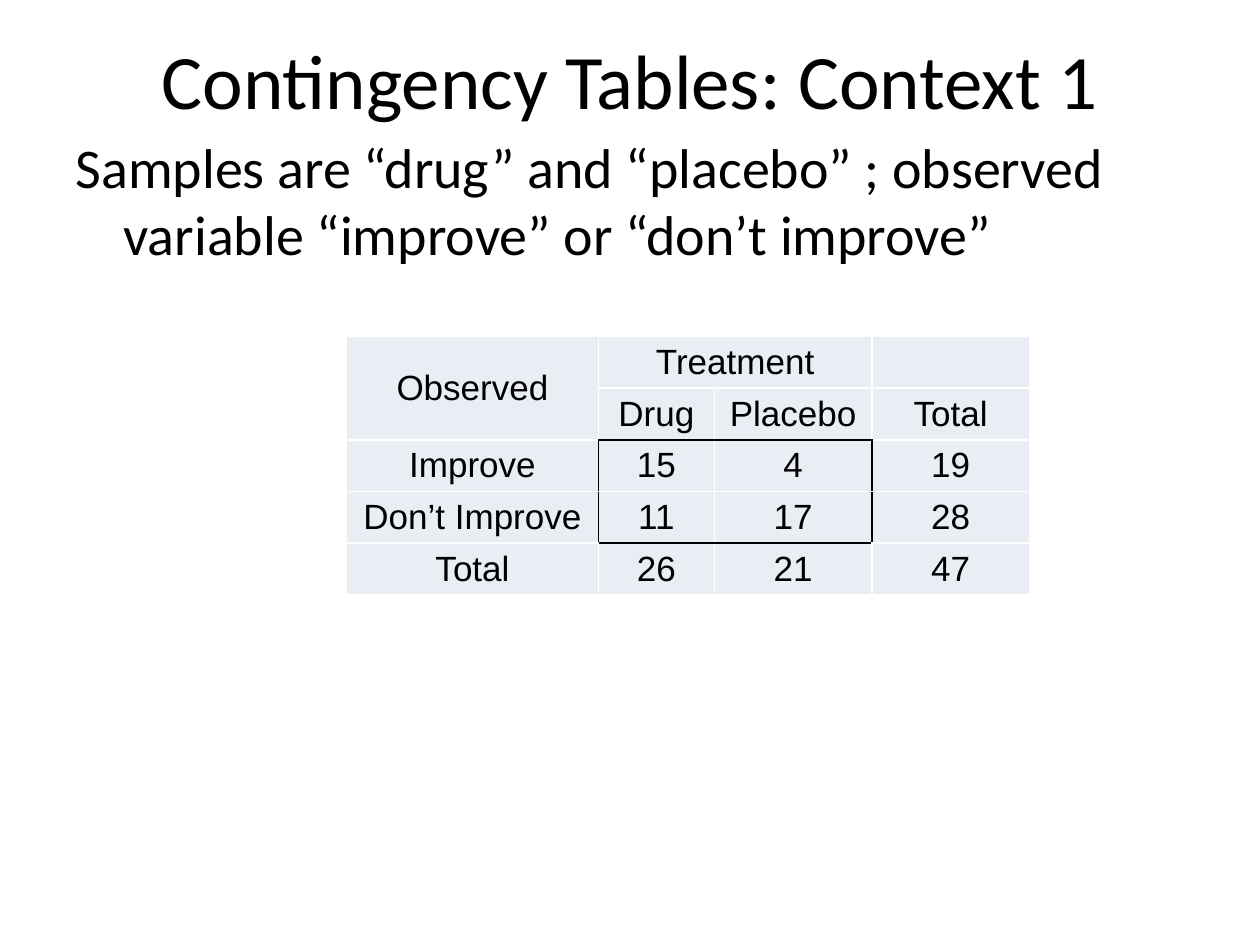
from lxml import etree
from pptx import Presentation
from pptx.dml.color import RGBColor
from pptx.enum import text
from pptx.oxml import ns
from pptx.util import Inches, Pt

BLACK = RGBColor(0x00, 0x00, 0x00)
WHITE = RGBColor(0xFF, 0xFF, 0xFF)
CELL_FILL = RGBColor(0xE9, 0xED, 0xF4)

COLUMNS = [2, 0.92, 1.25, 1.25]
ROW_HEIGHT = 0.41
ROWS = [
    ["Observed", "Treatment", "", ""],
    ["", "Drug", "Placebo", "Total"],
    ["Improve", "15", "4", "19"],
    ["Don’t Improve", "11", "17", "28"],
    ["Total", "26", "21", "47"],
]
SIDES = {"lnL": (0, -1), "lnR": (0, 1), "lnT": (-1, 0), "lnB": (1, 0)}


def format_paragraph(p, size, font):
    for r in p.runs:
        r.font.size = Pt(size)
        r.font.name = font
        r.font.color.rgb = BLACK


def fill_placeholder(sp, box, words, size):
    sp.left, sp.top, sp.width, sp.height = (Inches(n) for n in box)
    sp.text_frame.text = words
    p = sp.text_frame.paragraphs[0]
    format_paragraph(p, size, "Calibri")
    return p


def add_title(s, box):
    p = fill_placeholder(s.shapes.title, box, "Contingency Tables: Context 1", 44)
    p.alignment = text.PP_ALIGN.CENTER


def add_body(s, box):
    words = "Samples are “drug” and “placebo” ; observed variable “improve” or “don’t improve”"
    p = fill_placeholder(s.placeholders[1], box, words, 32)
    pPr = p._p.get_or_add_pPr()
    pPr.set("marL", str(Inches(0.38)))
    pPr.set("indent", str(-Inches(0.38)))
    etree.SubElement(pPr, ns.qn("a:buNone"))


def is_count(row, col):
    return row in (2, 3) and col in (1, 2)


def add_borders(cell, row, col):
    """Draw white cell edges, and black ones around the block of counts."""
    tcPr = cell._tc.get_or_add_tcPr()
    for side, (down, right) in SIDES.items():
        outline = is_count(row, col) != is_count(row + down, col + right)
        ln = etree.SubElement(tcPr, ns.qn(f"a:{side}"), w=str(Pt(1)))
        fill = etree.SubElement(ln, ns.qn("a:solidFill"))
        etree.SubElement(fill, ns.qn("a:srgbClr"), val=str(BLACK if outline else WHITE))


def add_contingency_table(s, left, top):
    frame = s.shapes.add_table(len(ROWS), len(COLUMNS), Inches(left), Inches(top),
                               Inches(sum(COLUMNS)), Inches(ROW_HEIGHT * len(ROWS)))
    table = frame.table
    for column, width in zip(table.columns, COLUMNS):
        column.width = Inches(width)
    for i, row in enumerate(ROWS):
        table.rows[i].height = Inches(ROW_HEIGHT)
        for j, words in enumerate(row):
            cell = table.cell(i, j)
            cell.text = words
            cell.vertical_anchor = text.MSO_ANCHOR.MIDDLE
            add_borders(cell, i, j)
            cell.fill.solid()
            cell.fill.fore_color.rgb = CELL_FILL
            p = cell.text_frame.paragraphs[0]
            p.alignment = text.PP_ALIGN.CENTER
            format_paragraph(p, 20, "Arial")
    table.cell(0, 0).merge(table.cell(1, 0))
    table.cell(0, 1).merge(table.cell(0, 2))


def main():
    prs = Presentation()
    prs.slide_width, prs.slide_height = Inches(10), Inches(7.5)
    s = prs.slides.add_slide(prs.slide_layouts[1])
    add_title(s, (0.5, 0, 9, 1.25))
    add_body(s, (0.5, 1, 9, 4.95))
    add_contingency_table(s, 2.75, 2.67)
    prs.save("out.pptx")


if __name__ == "__main__":
    main()
